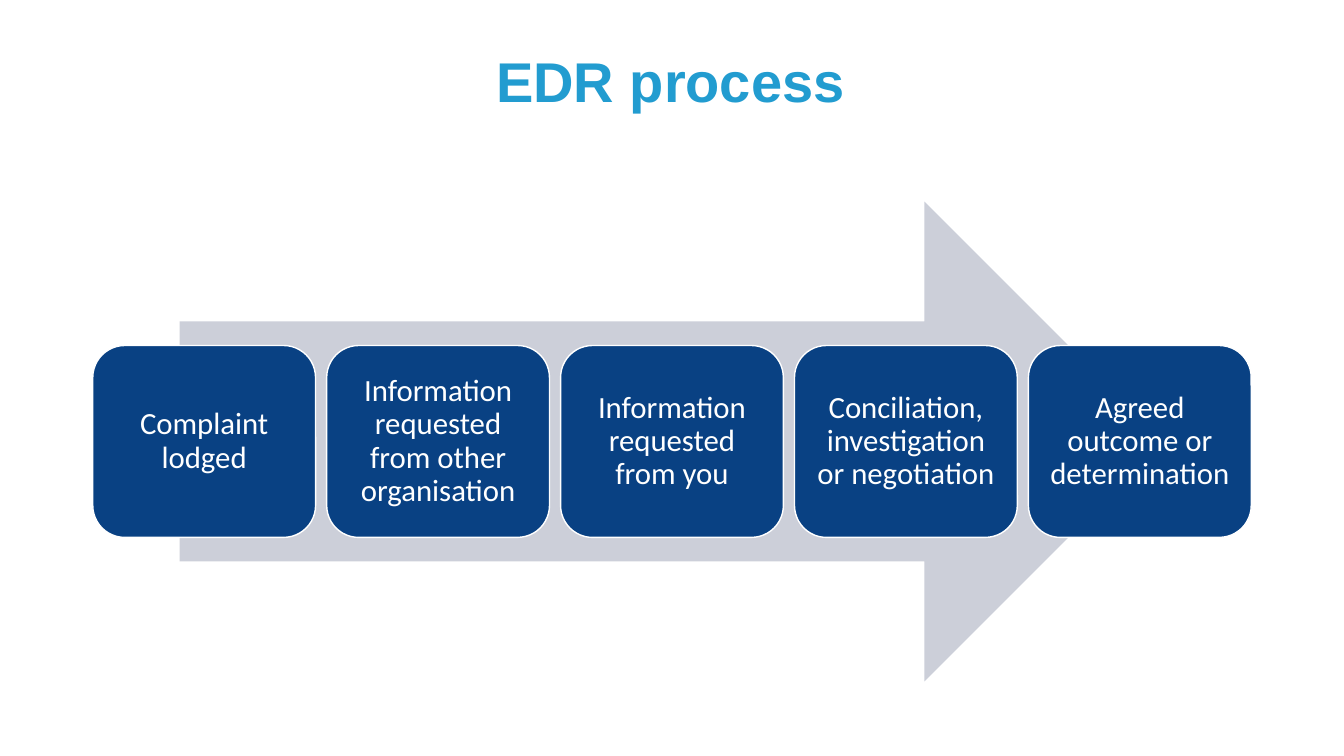
from pptx import Presentation
from pptx.dml.color import RGBColor
from pptx.enum.shapes import MSO_SHAPE
from pptx.enum.text import MSO_ANCHOR, MSO_AUTO_SIZE, PP_ALIGN
from pptx.util import Inches, Pt

ARROW, CARD = MSO_SHAPE.RIGHT_ARROW, MSO_SHAPE.ROUNDED_RECTANGLE
TOP, MIDDLE = MSO_ANCHOR.TOP, MSO_ANCHOR.MIDDLE
CENTER, NO_FIT = PP_ALIGN.CENTER, MSO_AUTO_SIZE.NONE

SKY = RGBColor(0x22, 0x9C, 0xD0)
NAVY = RGBColor(0x09, 0x41, 0x83)
GREY = RGBColor(0xCC, 0xCF, 0xD9)
WHITE = RGBColor(0xFF, 0xFF, 0xFF)

WIDE, HIGH = 13.33, 7.5
GAP = 0.11
STEPS = [
    "Complaint lodged",
    "Information requested from other organisation",
    "Information requested from you",
    "Conciliation, investigation or negotiation",
    "Agreed outcome or determination",
]


def write(shape, text, font="Calibri", size=22, color=WHITE, bold=False,
          anchor=MIDDLE, inset=0.09):
    frame = shape.text_frame
    frame.text = text
    frame.word_wrap = True
    frame.auto_size = NO_FIT
    frame.vertical_anchor = anchor
    frame.margin_left = frame.margin_right = Inches(inset)
    frame.margin_top = frame.margin_bottom = Inches(inset)
    para = frame.paragraphs[0]
    para.alignment = CENTER
    para.line_spacing = 0.9
    face = para.runs[0].font
    face.name, face.size, face.bold = font, Pt(size), bold
    face.color.rgb = color


def draw(slide, kind, box, fill, line=None):
    shape = slide.shapes.add_shape(kind, *map(Inches, box))
    shape.shadow.inherit = False
    shape.fill.solid()
    shape.fill.fore_color.rgb = fill
    if line is None:
        shape.line.fill.background()
    else:
        shape.line.color.rgb = line
        shape.line.width = Pt(1)
    return shape


def add_title(slide, box, text):
    title = slide.shapes.title
    title.left, title.top, title.width, title.height = map(Inches, box)
    write(title, text, font="Arial", size=40, color=SKY, bold=True,
          anchor=TOP, inset=0.05)


def add_flow(slide, box, steps):
    left, top, width, height = box

    # Arrow behind the cards, 85% of the width and centred
    span = 0.85 * width
    draw(slide, ARROW, (left + (width - span) / 2, top, span, height), GREY)

    # Equal cards across the middle, 40% of the height
    card = (width - GAP * (len(steps) - 1)) / len(steps)
    for col, step in enumerate(steps):
        place = (left + col * (card + GAP), top + 0.3 * height,
                 card, 0.4 * height)
        write(draw(slide, CARD, place, NAVY, WHITE), step)


def main():
    deck = Presentation()
    deck.slide_width, deck.slide_height = Inches(WIDE), Inches(HIGH)
    slide = deck.slides.add_slide(deck.slide_layouts[5])
    add_title(slide, (1.02, 0.49, 11.26, 0.97), "EDR process")
    add_flow(slide, (0.92, 2, 11.49, 4.76), STEPS)
    deck.save("out.pptx")


if __name__ == "__main__":
    main()
